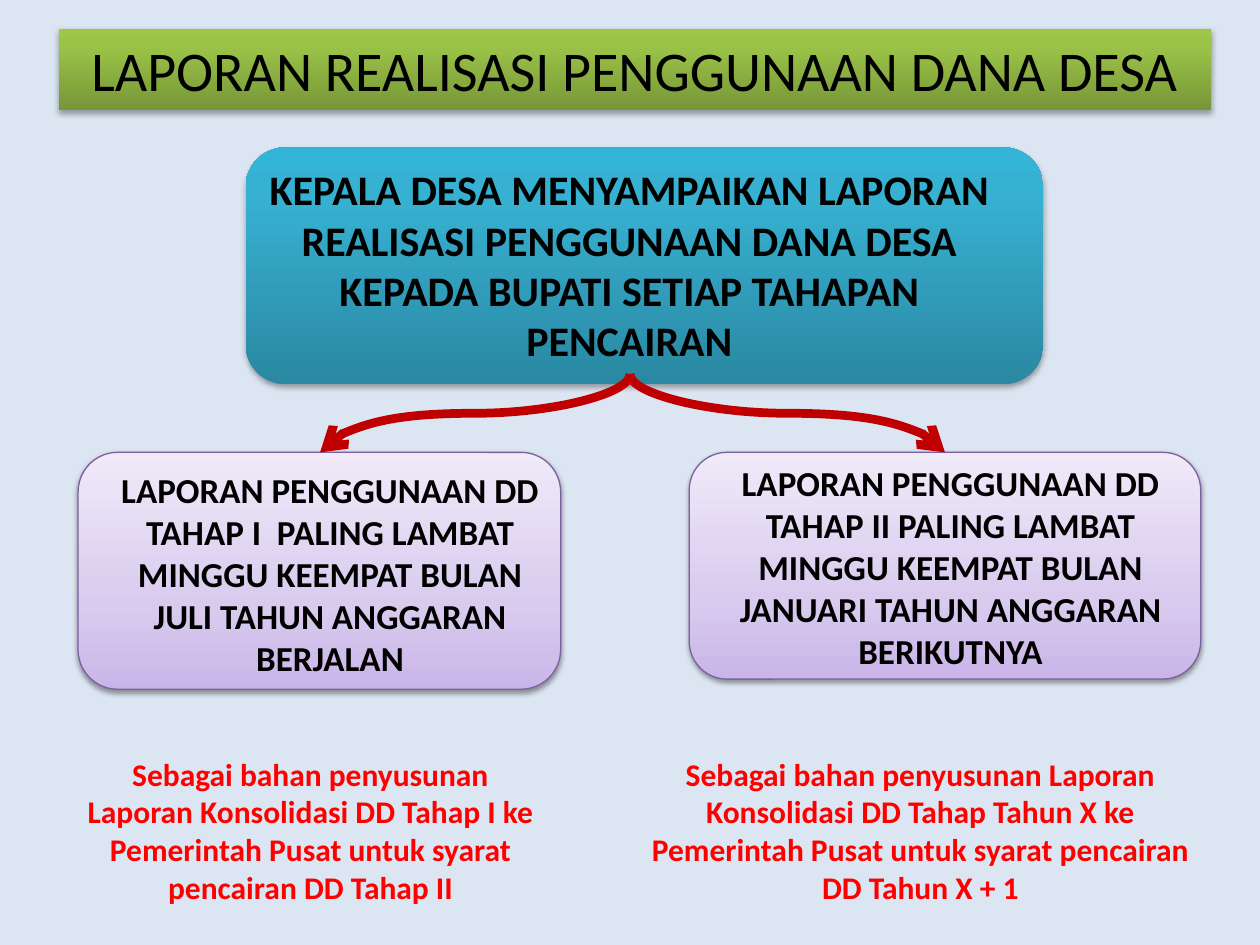
from dataclasses import dataclass

from lxml.etree import SubElement
from pptx import Presentation
from pptx.dml.color import RGBColor
from pptx.enum.shapes import MSO_CONNECTOR, MSO_SHAPE
from pptx.enum.text import MSO_AUTO_SIZE, PP_ALIGN
from pptx.oxml.ns import qn
from pptx.util import Inches, Pt

COLUMNS, ROWS = 100, 75
CELL = Inches(0.1)


@dataclass(frozen=True)
class Theme:
    """Colours, gradients and type sizes of the slide."""
    font: str = "Calibri"
    background: str = "DCE6F2"
    ink: str = "000000"
    purpose: str = "FF0000"
    arrow: str = "C00000"
    stage_edge: str = "7D60A0"
    green: tuple = ((0, "779737"), (80, "9BC348"), (100, "9DC746"))
    teal: tuple = ((0, "2A88A2"), (80, "37B1D2"), (100, "34B4D6"))
    lilac: tuple = ((0, "C9B5E8"), (35, "D8CBEE"), (100, "F0EAF9"))
    title_size: int = 32
    duty_size: int = 24
    stage_size: int = 20
    purpose_size: int = 18


THEME = Theme()


def cells(*counts):
    """Turn grid counts into slide lengths."""
    return [round(count * CELL) for count in counts]


def write(shape, wording, size, colour=THEME.ink, bold=True):
    """Put one centred paragraph into a shape."""
    frame = shape.text_frame
    frame.word_wrap = True
    frame.auto_size = MSO_AUTO_SIZE.SHAPE_TO_FIT_TEXT
    frame.text = wording
    paragraph = frame.paragraphs[0]
    paragraph.alignment = PP_ALIGN.CENTER
    font = paragraph.runs[0].font
    font.name, font.size, font.bold = THEME.font, Pt(size), bold
    font.color.rgb = RGBColor.from_string(colour)


def add_text(slide, box, wording, size, colour=THEME.ink):
    """Add a bold wrapped text box."""
    write(slide.shapes.add_textbox(*cells(*box)), wording, size, colour)


def paint_gradient(shape, stops):
    """Fill a shape with a gradient that rises from the bottom."""
    shape.fill.gradient()
    shape.fill.gradient_angle = 90
    stop_list = shape._element.spPr.find(".//" + qn("a:gsLst"))
    for old_stop in list(stop_list):
        stop_list.remove(old_stop)
    for percent, colour in stops:
        stop = SubElement(stop_list, qn("a:gs"), pos=str(percent * 1000))
        SubElement(stop, qn("a:srgbClr"), val=colour)


def cast_shadow(shape, alpha, distance):
    """Give a shape a soft shadow straight below it."""
    shape.shadow.inherit = False
    effects = shape._element.spPr.find(qn("a:effectLst"))
    shadow = SubElement(effects, qn("a:outerShdw"), blurRad=str(Pt(3.1)),
                        dist=str(Pt(distance)), dir="5400000", rotWithShape="0")
    colour = SubElement(shadow, qn("a:srgbClr"), val=THEME.ink)
    SubElement(colour, qn("a:alpha"), val=str(alpha * 1000))


def add_panel(slide, kind, box, stops, edge=None):
    """Add a gradient panel, outlined when an edge colour is given."""
    panel = slide.shapes.add_shape(kind, *cells(*box))
    paint_gradient(panel, stops)
    if edge:
        panel.line.color.rgb = RGBColor.from_string(edge)
        panel.line.width = Pt(0.75)
        cast_shadow(panel, 38, 1.6)
    else:
        panel.line.fill.background()
        cast_shadow(panel, 35, 1.8)
    return panel


def add_branch(slide, start, end):
    """Add a curved arrow that leaves and arrives vertically."""
    (x0, y0), (x1, y1) = start, end
    middle_x, middle_y = (x0 + x1) / 2, (y0 + y1) / 2
    half_run = abs(x1 - x0) / 2
    half_drop = (y1 - y0) / 2 * (1 if x1 < x0 else -1)
    branch = slide.shapes.add_connector(MSO_CONNECTOR.CURVE, *cells(
        middle_x - half_drop, middle_y - half_run,
        middle_x + half_drop, middle_y + half_run))
    properties = branch._element.spPr
    turn = 90 if x1 < x0 else 270
    properties.find(qn("a:xfrm")).set("rot", str(turn * 60000))
    branch.line.color.rgb = RGBColor.from_string(THEME.arrow)
    branch.line.width = Pt(5)
    SubElement(properties.find(qn("a:ln")), qn("a:tailEnd"), type="arrow")
    SubElement(properties, qn("a:effectLst"))


def add_stage(slide, panel_box, text_box, wording):
    """Add one reporting stage."""
    add_panel(slide, MSO_SHAPE.ROUNDED_RECTANGLE, panel_box, THEME.lilac, THEME.stage_edge)
    add_text(slide, text_box, wording, THEME.stage_size)


def main():
    """Build and save the slide."""
    deck = Presentation()
    deck.slide_width, deck.slide_height = cells(COLUMNS, ROWS)
    slide = deck.slides.add_slide(deck.slide_layouts[6])
    slide.background.fill.solid()
    slide.background.fill.fore_color.rgb = RGBColor.from_string(THEME.background)

    add_panel(slide, MSO_SHAPE.ROUNDED_RECTANGLE, (19.5, 11.7, 63.3, 18.8), THEME.teal)
    add_text(slide, (18.7, 12.5, 62.5, 17.2),
             "KEPALA DESA MENYAMPAIKAN LAPORAN REALISASI PENGGUNAAN DANA DESA "
             "KEPADA BUPATI SETIAP TAHAPAN PENCAIRAN", THEME.duty_size)
    title = add_panel(slide, MSO_SHAPE.RECTANGLE, (4.7, 2.3, 91.4, 6.4), THEME.green)
    write(title, "LAPORAN REALISASI PENGGUNAAN DANA DESA", THEME.title_size, bold=False)

    add_stage(slide, (6.2, 35.9, 38.3, 18.8), (8.6, 36.7, 35.2, 17.8),
              "LAPORAN PENGGUNAAN DD TAHAP I  PALING LAMBAT MINGGU KEEMPAT BULAN "
              "JULI TAHUN ANGGARAN BERJALAN")
    add_stage(slide, (54.7, 35.9, 40.6, 18), (56.3, 36.1, 38.3, 17.8),
              "LAPORAN PENGGUNAAN DD TAHAP II PALING LAMBAT MINGGU KEEMPAT BULAN "
              "JANUARI TAHUN ANGGARAN BERIKUTNYA")
    for stage_x in (25.4, 75):
        add_branch(slide, (COLUMNS / 2, 29.7), (stage_x, 35.9))

    purposes = (
        (5.5, 38.3, "Sebagai bahan penyusunan Laporan Konsolidasi DD Tahap I ke "
                    "Pemerintah Pusat untuk syarat pencairan DD Tahap II"),
        (50, 46.1, "Sebagai bahan penyusunan Laporan Konsolidasi DD Tahap Tahun X ke "
                   "Pemerintah Pusat untuk syarat pencairan DD Tahun X + 1"),
    )
    for left, width, wording in purposes:
        add_text(slide, (left, 59.4, width, 13.1), wording, THEME.purpose_size, THEME.purpose)
    deck.save("out.pptx")


if __name__ == "__main__":
    main()
